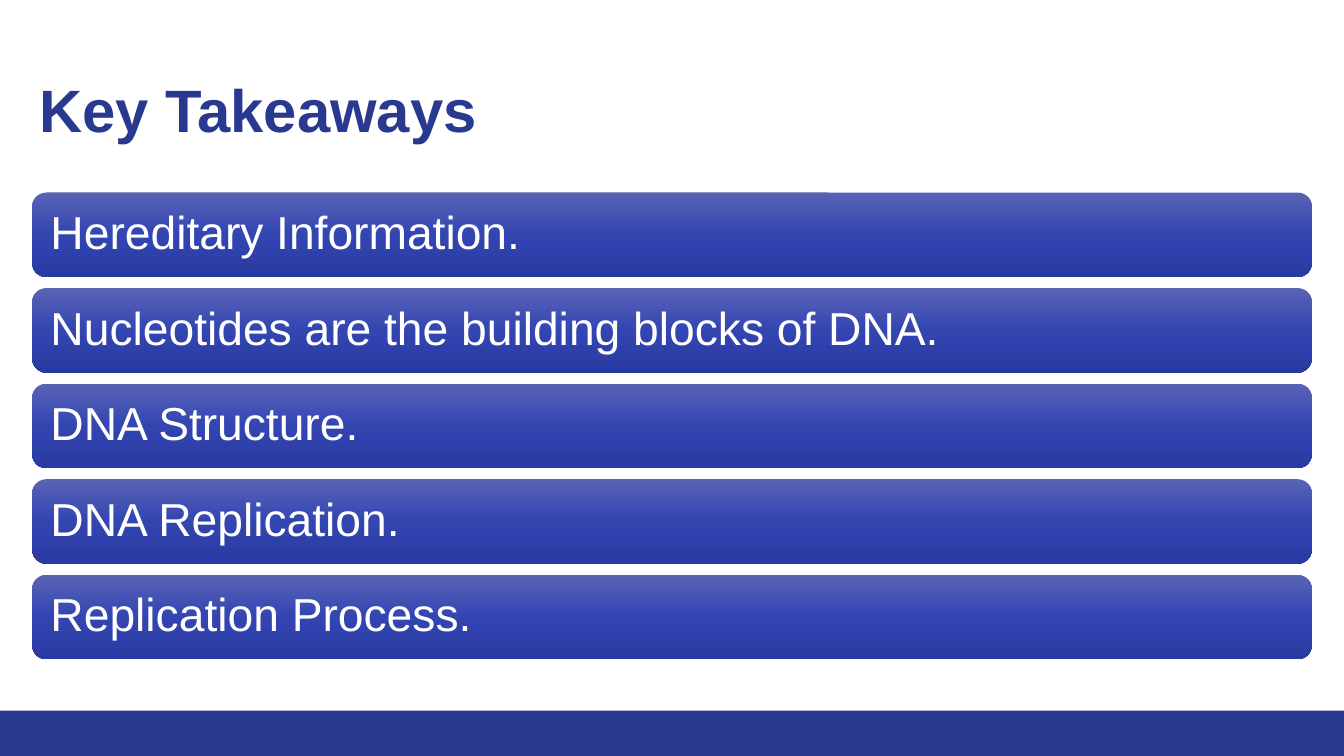
from copy import deepcopy

from pptx import Presentation
from pptx.dml.color import RGBColor
from pptx.enum.shapes import MSO_SHAPE
from pptx.enum.text import MSO_ANCHOR, PP_ALIGN
from pptx.oxml.ns import qn
from pptx.util import Inches, Pt

WIDE, HIGH = 13.33, 7.5
NAVY = RGBColor(0x2A, 0x39, 0x90)
WHITE = RGBColor(0xFF, 0xFF, 0xFF)
SHADES = (
    (0, RGBColor(0x59, 0x63, 0xB6)),
    (0.5, RGBColor(0x33, 0x45, 0xB1)),
    (1, RGBColor(0x29, 0x3A, 0xA2)),
)
POINTS = (
    "Hereditary Information.",
    "Nucleotides are the building blocks of DNA.",
    "DNA Structure.",
    "DNA Replication.",
    "Replication Process.",
)


def add_block(slide, kind, box):
    """Add a preset shape without line or shadow."""
    block = slide.shapes.add_shape(kind, *map(Inches, box))
    block.shadow.inherit = False
    block.line.fill.background()
    return block


def write(shape, text, size, color, bold=False, inset=0.1):
    """Write one left-aligned line, centred vertically."""
    frame = shape.text_frame
    frame.word_wrap = True
    frame.vertical_anchor = MSO_ANCHOR.MIDDLE
    frame.margin_left = frame.margin_right = Inches(inset)
    frame.margin_top = frame.margin_bottom = Inches(inset)
    line = frame.paragraphs[0]
    line.alignment = PP_ALIGN.LEFT
    line.line_spacing = 0.9
    run = line.add_run()
    run.text = text
    font = run.font
    font.name, font.size, font.bold = "Arial", Pt(size), bold
    font.color.rgb = color


def shade(shape):
    """Fill a shape with the three-stop gradient, top to bottom."""
    fill = shape.fill
    fill.gradient()
    fill.gradient_angle = 270
    stops = shape.element.spPr.find(qn("a:gradFill")).find(qn("a:gsLst"))
    stops.insert(1, deepcopy(stops[0]))
    for stop, (place, color) in zip(fill.gradient_stops, SHADES):
        stop.position = place
        stop.color.rgb = color


def add_title(slide, box, text):
    """Place the slide heading in its box."""
    title = slide.shapes.add_textbox(*map(Inches, box))
    write(title, text, 42.7, NAVY, bold=True)


def add_bars(slide, box, points, gap=0.11):
    """Stack one rounded bar per point, evenly spaced in the box."""
    left, top, width, height = box
    step = (height + gap) / len(points)
    for row, point in enumerate(points):
        place = (left, top + row * step, width, step - gap)
        bar = add_block(slide, MSO_SHAPE.ROUNDED_RECTANGLE, place)
        shade(bar)
        write(bar, point, 33, WHITE, inset=0.14)


def add_foot(slide, box):
    """Draw the solid band along the bottom edge."""
    band = add_block(slide, MSO_SHAPE.RECTANGLE, box)
    band.fill.solid()
    band.fill.fore_color.rgb = NAVY


def main():
    """Build and save the slide."""
    deck = Presentation()
    deck.slide_width, deck.slide_height = Inches(WIDE), Inches(HIGH)
    slide = deck.slides.add_slide(deck.slide_layouts[6])
    foot = HIGH * 0.06
    add_foot(slide, (0, HIGH - foot, WIDE, foot))
    add_title(slide, (0.29, 0.4, 12.69, 1.45), "Key Takeaways")
    add_bars(slide, (0.32, 1.91, 12.69, 4.63), POINTS)
    deck.save("out.pptx")


if __name__ == "__main__":
    main()
